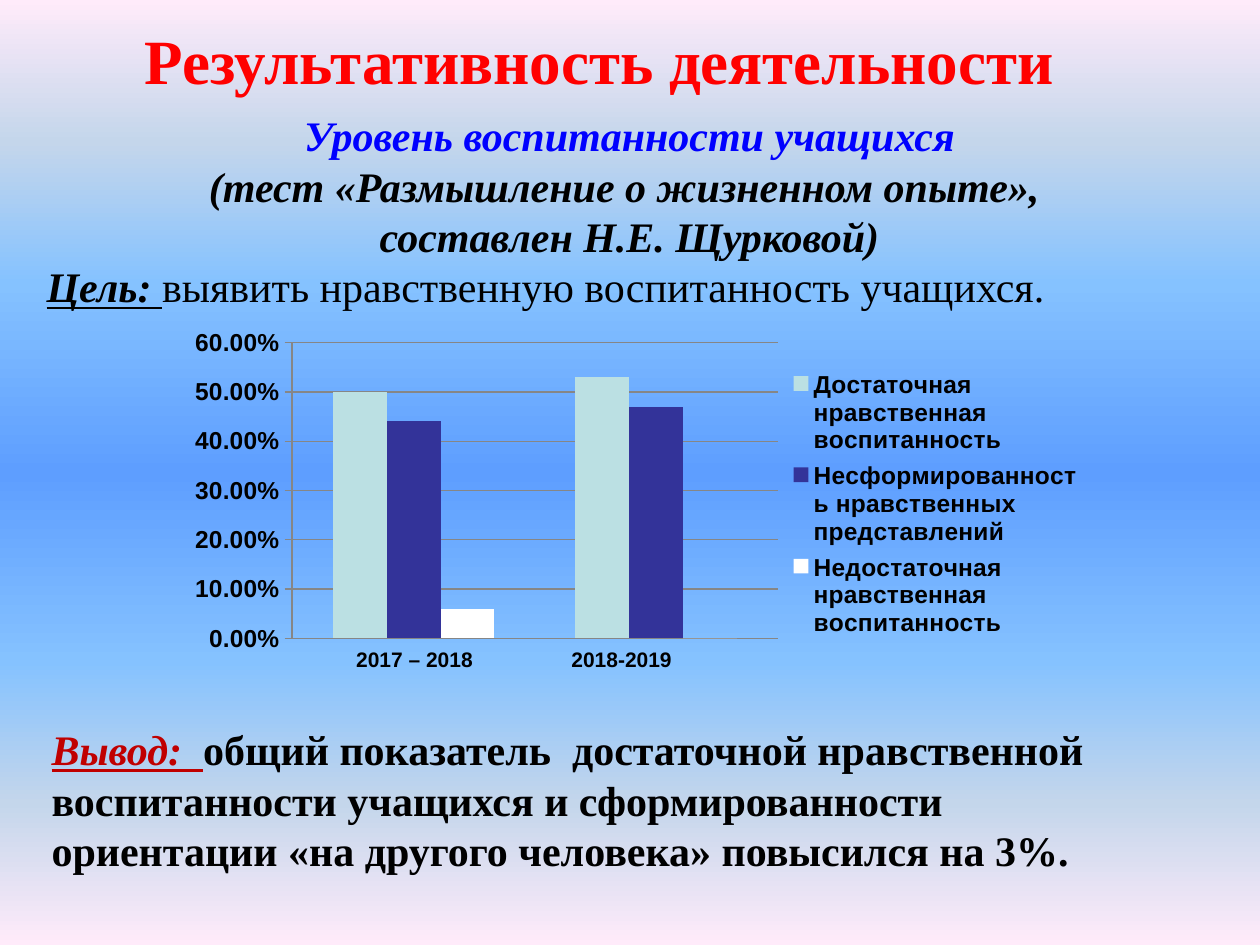
from lxml import etree
from pptx import Presentation
from pptx.chart.data import CategoryChartData
from pptx.dml.color import RGBColor
from pptx.enum.chart import XL_CHART_TYPE as ChartType, XL_LEGEND_POSITION as LegendSide, XL_TICK_MARK as Tick
from pptx.enum.text import MSO_ANCHOR as Anchor, MSO_AUTO_SIZE as AutoSize, PP_ALIGN as Align
from pptx.oxml import parse_xml
from pptx.oxml.ns import nsdecls, qn
from pptx.util import Cm, Pt

COLORS = {
    "title": "FF0000", "subtitle": "0000FF", "conclusion": "C00000", "text": "000000",
    "grid": "868686", "enough": "BBE0E3", "unformed": "333399", "lacking": "FFFFFF",
}
BACKGROUND = [(0, "FFEBFA"), (15, "C4D6EB"), (30, "85C2FF"), (50, "5E9EFF"),
              (70, "85C2FF"), (85, "C4D6EB"), (100, "FFEBFA")]

# Each paragraph: alignment, then runs of (text, colour, styles)
TITLE = [(Align.CENTER, [("Результативность деятельности", "title", "b")])]
INTRO = [
    (Align.CENTER, [("Уровень воспитанности учащихся", "subtitle", "bi")]),
    (Align.CENTER, [("(тест «Размышление о жизненном опыте», ", "text", "bi")]),
    (Align.CENTER, [("составлен Н.Е. Щурковой)", "text", "bi")]),
    (Align.LEFT, [("Цель: ", "text", "biu"),
                  ("выявить нравственную воспитанность учащихся.", "text", "")]),
]
CONCLUSION = [(Align.LEFT, [
    ("Вывод:  ", "conclusion", "biu"),
    ("общий показатель  достаточной нравственной воспитанности учащихся и сформированности "
     "ориентации «на другого человека» повысился на 3%.", "text", "b"),
])]
YEARS = [(Align.LEFT, [("2017 – 2018\t2018-2019", "text", "b")])]
YEAR_TAB = Cm(4.34)

CATEGORIES = ["1", "2"]
SERIES = [
    ("Достаточная нравственная воспитанность", (0.5, 0.53), "enough"),
    ("Несформированность нравственных представлений", (0.44, 0.47), "unformed"),
    ("Недостаточная нравственная воспитанность", (0.06, 0), "lacking"),
]


def rgb(name):
    return RGBColor.from_string(COLORS[name])


def paint_background(page):
    fill = page.background.fill
    fill.gradient()
    fill.gradient_angle = 270
    stops = page.element.find(".//" + qn("a:gsLst"))
    for stop in list(stops):
        stops.remove(stop)
    for percent, color in BACKGROUND:
        stop = etree.SubElement(stops, qn("a:gs"), pos=str(percent * 1000))
        etree.SubElement(stop, qn("a:srgbClr"), val=color)


def add_text(page, place, paragraphs, size, font="Times New Roman",
             anchor=Anchor.MIDDLE, grow=AutoSize.SHAPE_TO_FIT_TEXT):
    box = page.shapes.add_textbox(*map(Cm, place))
    frame = box.text_frame
    frame.word_wrap = True
    frame.auto_size = grow
    frame.vertical_anchor = anchor
    for index, (align, spans) in enumerate(paragraphs):
        para = frame.add_paragraph() if index else frame.paragraphs[0]
        para.alignment = align
        for text, color, styles in spans:
            span = para.add_run()
            span.text = text
            span.font.name, span.font.size = font, Pt(size)
            span.font.color.rgb = rgb(color)
            span.font.bold = "b" in styles
            span.font.italic = "i" in styles
            span.font.underline = "u" in styles
    return box


def set_layout(element, x, y, w, h, inner=False):
    """Place a chart part by fractions of the chart area."""
    target = '<c:layoutTarget val="inner"/>' if inner else ""
    values = "".join(f'<c:{key} val="{value}"/>' for key, value in zip("xywh", (x, y, w, h)))
    layout = parse_xml(
        f'<c:layout {nsdecls("c")}><c:manualLayout>{target}<c:xMode val="edge"/>'
        f'<c:yMode val="edge"/>{values}</c:manualLayout></c:layout>')
    for old in element.findall(qn("c:layout")):
        element.remove(old)
    position = 1 if element.tag == qn("c:legend") else 0
    element.insert(position, layout)


def add_level_chart(page, place):
    data = CategoryChartData(number_format="0.00%")
    data.categories = CATEGORIES
    for name, values, _ in SERIES:
        data.add_series(name, values)
    chart = page.shapes.add_chart(ChartType.COLUMN_CLUSTERED, *map(Cm, place), data).chart
    chart.has_title = False
    chart.font.name, chart.font.size = "Arial", Pt(10)
    chart.font.color.rgb = rgb("text")

    plot = chart.plots[0]
    plot.gap_width, plot.overlap = 150, 0
    plot.vary_by_categories = False
    for series, (_, _, color) in zip(plot.series, SERIES):
        series.format.fill.solid()
        series.format.fill.fore_color.rgb = rgb(color)

    chart.category_axis.visible = False
    axis = chart.value_axis
    axis.minimum_scale, axis.maximum_scale, axis.major_unit = 0, 0.6, 0.1
    axis.major_tick_mark = Tick.CROSS
    axis.has_major_gridlines = True
    for line in (axis.format.line, axis.major_gridlines.format.line):
        line.color.rgb = rgb("grid")
        line.width = Pt(0.75)
    axis.tick_labels.number_format = "0.00%"
    axis.tick_labels.number_format_is_linked = False

    chart.has_legend = True
    legend = chart.legend
    legend.position = LegendSide.RIGHT
    legend.include_in_layout = False
    for font in (axis.tick_labels.font, legend.font):
        font.name, font.size, font.bold = "Arial", Pt(14), True
        font.color.rgb = rgb("text")
    plot_area = chart.element.find(".//" + qn("c:plotArea"))
    set_layout(plot_area, 0.125, 0.06, 0.53, 0.88, inner=True)
    set_layout(chart.element.find(".//" + qn("c:legend")), 0.68, 0.12, 0.31, 0.84)


def main():
    deck = Presentation()
    deck.slide_width, deck.slide_height = Cm(25.4), Cm(19.05)
    page = deck.slides.add_slide(deck.slide_layouts[6])
    paint_background(page)
    add_text(page, (0.58, 0, 23.01, 2.39), TITLE, 36, grow=AutoSize.NONE)
    add_text(page, (0.69, 2.06, 24, 4.37), INTRO, 24)
    add_text(page, (0.79, 14.45, 22.3, 3.33), CONCLUSION, 24)
    add_level_chart(page, (3.58, 6.5, 18.47, 6.78))
    years = add_text(page, (6.93, 12.9, 8.53, 0.76), YEARS, 12, "Arial", Anchor.TOP)
    tabs = etree.SubElement(years.text_frame.paragraphs[0]._p.get_or_add_pPr(), qn("a:tabLst"))
    etree.SubElement(tabs, qn("a:tab"), pos=str(YEAR_TAB), algn="l")
    deck.save("out.pptx")


if __name__ == "__main__":
    main()
